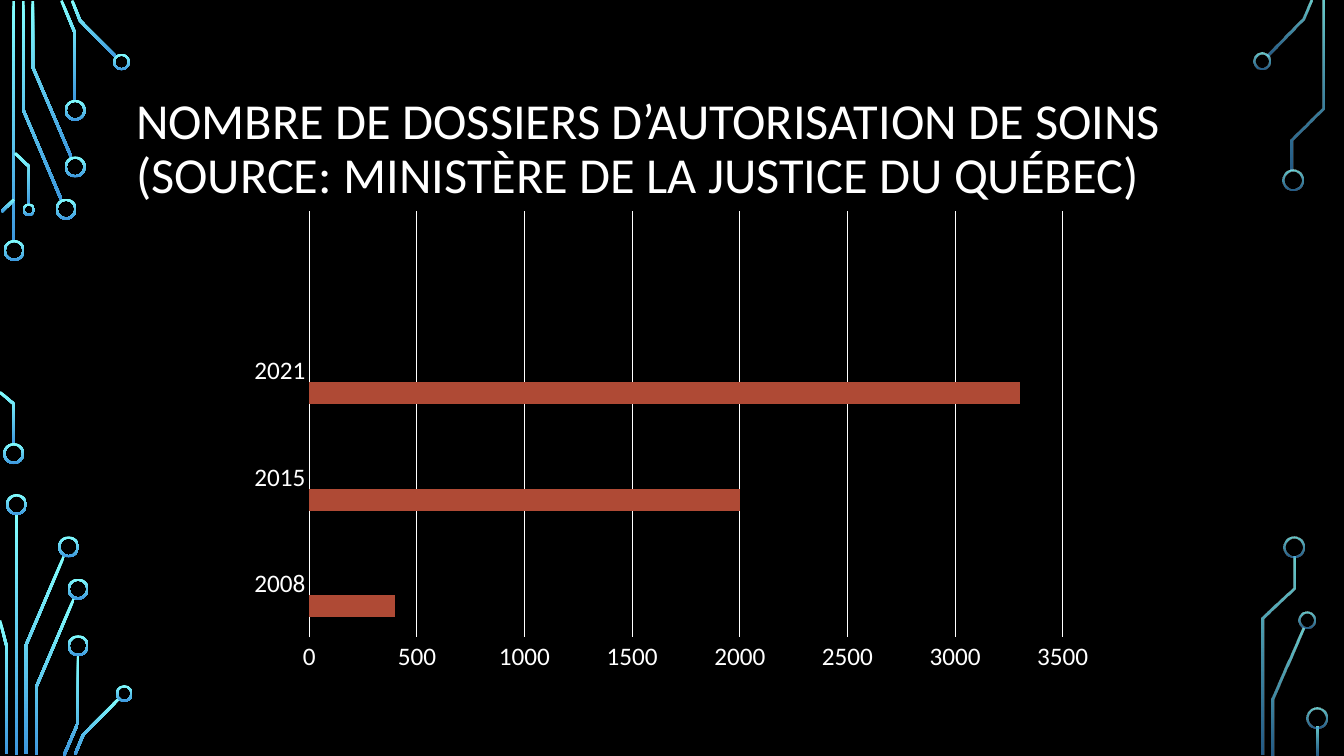
from dataclasses import dataclass
import math

from lxml import etree
from pptx import Presentation
from pptx import util as u
from pptx.chart import data
from pptx.dml.color import RGBColor
from pptx.enum import chart as charts, shapes, text
from pptx.oxml import ns


@dataclass(frozen=True)
class Theme:
    font: str = "Calibri"
    background: str = "000000"
    ink: str = "FFFFFF"
    glow_top: str = "82FFFF"
    glow_bottom: str = "3D97DE"
    series: tuple = ("AF4A35", "D35940", "E4ADA7")
    title_size: float = 36
    axis_size: float = 18
    chart_size: float = 10
    hairline: float = 0.75
    wire: float = 1.9
    ring_wall: float = 1.5


# Circuit traces: centre lines of the wires, then rings as (x, y, diameter), in points
LEFT_WIRES = [
    [(9.7, 0.7), (9.7, 172.8)],
    [(16.6, 0.7), (16.6, 78.5), (43.9, 142.9)],
    [(23.4, 0.7), (23.4, 47.9), (51.1, 112.7)],
    [(43.9, 0.4), (53.6, 23.8), (53.6, 72)],
    [(51.5, 0.4), (57.2, 14.8), (83.2, 41)],
    [(1.1, 151.2), (10.1, 142.6)],
    [(0, 280.1), (10.1, 288.7), (10.1, 317.5)],
    [(10.8, 109.4), (20.9, 119.2), (20.9, 146.2)],
    [(11.8, 367.2), (11.8, 539.3)],
    [(45.7, 397.1), (18.4, 461.2), (18.4, 538.6)],
    [(0, 443.2), (4.7, 461.5), (4.7, 538.6)],
    [(52.9, 427.3), (25.6, 491.4), (25.6, 539.3)],
    [(55.8, 468), (55.8, 516.2), (45.7, 539.6)],
    [(85, 499), (59.4, 524.9), (53.6, 538.9)],
]
LEFT_RINGS = [
    (10.1, 178.9, 15), (9.8, 324, 15), (47.2, 149.4, 15), (53.7, 119.2, 15),
    (53.7, 78.8, 15), (86.8, 44.3, 12), (20.6, 149.8, 9), (11.8, 360.4, 15),
    (49, 390.6, 15), (55.8, 420.8, 15), (55.8, 461.2, 15), (88.8, 495.4, 12),
]
RIGHT_WIRES = [
    [(936.4, 0.4), (930.6, 14), (905, 40)],
    [(945, 0.7), (945, 77.4), (923, 99.7), (923, 121.7)],
    [(931, 448.9), (909, 499.3), (909, 539.3)],
    [(924.1, 397.4), (924.1, 420.1), (901.8, 441.7), (901.8, 539.3)],
    [(941, 519.1), (941, 539.3)],
]
RIGHT_RINGS = [
    (901.3, 43.6, 12), (923.4, 128.5, 15), (933.5, 443.2, 12),
    (924.1, 390.6, 15), (940.8, 512.6, 15),
]


def wire_edge(points, offset):
    """Points of a line parallel to the centre line, with mitred corners."""
    normals = []
    for (x1, y1), (x2, y2) in zip(points, points[1:]):
        length = math.hypot(x2 - x1, y2 - y1)
        normals.append(((y1 - y2) / length, (x2 - x1) / length))
    edge = []
    for (x, y), (ax, ay), (bx, by) in zip(points, normals[:1] + normals,
                                          normals + normals[-1:]):
        reach = offset / (1 + ax * bx + ay * by)
        edge.append((x + (ax + bx) * reach, y + (ay + by) * reach))
    return edge


class SlideBuilder:
    def __init__(self, deck, theme):
        self.theme = theme
        self.page = deck.slides.add_slide(deck.slide_layouts[5])
        fill = self.page.background.fill
        fill.solid()
        fill.fore_color.rgb = RGBColor.from_string(theme.background)

    def glow(self, shape, alphas):
        """Vertical gradient, optionally with one opacity per stop."""
        shape.shadow.inherit = False
        shape.line.fill.background()
        shape.fill.gradient()
        shape.fill.gradient_angle = 270
        colors = (self.theme.glow_top, self.theme.glow_bottom)
        for index, stop in enumerate(shape.fill.gradient_stops):
            stop.position = index
            stop.color.rgb = RGBColor.from_string(colors[index])
        if alphas:
            stops = shape.fill._fill._gradFill.iter(ns.qn("a:srgbClr"))
            for color, alpha in zip(stops, alphas):
                etree.SubElement(color, ns.qn("a:alpha"), val=str(alpha * 1000))

    def wire(self, points, alphas=None):
        half = self.theme.wire / 2
        outline = wire_edge(points, half) + wire_edge(points, -half)[::-1]
        outline = [(u.Pt(x), u.Pt(y)) for x, y in outline]
        builder = self.page.shapes.build_freeform(*outline[0])
        builder.add_line_segments(outline[1:], close=True)
        self.glow(builder.convert_to_shape(), alphas)

    def ring(self, x, y, size, alphas=None):
        shape = self.page.shapes.add_shape(
            shapes.MSO_SHAPE.DONUT, u.Pt(x - size / 2), u.Pt(y - size / 2),
            u.Pt(size), u.Pt(size))
        shape.adjustments[0] = self.theme.ring_wall / size
        self.glow(shape, alphas)

    def style_font(self, font, size):
        font.name = self.theme.font
        font.size = u.Pt(size)
        font.color.rgb = RGBColor.from_string(self.theme.ink)

    def title(self, words, left, top, width, height):
        box = self.page.shapes.title
        box.left, box.top, box.width, box.height = map(u.Pt, (left, top, width, height))
        frame = box.text_frame
        frame.text = words
        frame.word_wrap = True
        frame.auto_size = text.MSO_AUTO_SIZE.NONE
        frame.vertical_anchor = text.MSO_ANCHOR.MIDDLE
        para = frame.paragraphs[0]
        para.alignment = text.PP_ALIGN.LEFT
        para.line_spacing = 0.9
        for span in para.runs:
            self.style_font(span.font, self.theme.title_size)
        # Bring the title in front of the traces
        self.page.shapes._spTree.append(box._element)

    def hairline(self, line):
        line.color.rgb = RGBColor.from_string(self.theme.ink)
        line.width = u.Pt(self.theme.hairline)

    def bar_chart(self, categories, series, left, top, width, height):
        table = data.CategoryChartData()
        table.categories = categories
        for name, values in series:
            table.add_series(name, values)
        chart = self.page.shapes.add_chart(
            charts.XL_CHART_TYPE.BAR_CLUSTERED,
            *map(u.Pt, (left, top, width, height)), table).chart
        chart.has_title = False
        chart.has_legend = False
        self.style_font(chart.font, self.theme.chart_size)

        # Bars
        plot = chart.plots[0]
        plot.gap_width = 182
        plot.overlap = 0
        plot.vary_by_categories = False
        for bars, color in zip(plot.series, self.theme.series):
            bars.format.fill.solid()
            bars.format.fill.fore_color.rgb = RGBColor.from_string(color)

        # Axes
        for axis in (chart.category_axis, chart.value_axis):
            axis.major_tick_mark = axis.minor_tick_mark = charts.XL_TICK_MARK.NONE
            self.style_font(axis.tick_labels.font, self.theme.axis_size)
        self.hairline(chart.category_axis.format.line)
        values_axis = chart.value_axis
        values_axis.minimum_scale, values_axis.maximum_scale = 0, 3500
        values_axis.major_unit = 500
        values_axis.format.line.fill.background()
        self.hairline(values_axis.major_gridlines.format.line)


def main():
    deck = Presentation()
    deck.slide_width, deck.slide_height = u.Pt(960), u.Pt(540)
    slide = SlideBuilder(deck, Theme())

    # Traces: opaque on the left, translucent on the right
    for wires, rings, alphas in ((LEFT_WIRES, LEFT_RINGS, None),
                                 (RIGHT_WIRES, RIGHT_RINGS, (80, 60))):
        for points in wires:
            slide.wire(points, alphas)
        for ring in rings:
            slide.ring(*ring, alphas)

    # Title and chart
    slide.title("NOMBRE DE DOSSIERS D’AUTORISATION DE SOINS "
                "(SOURCE: MINISTÈRE DE LA JUSTICE DU QUÉBEC)", 90, 49, 780, 116.6)
    blank = [None] * 4
    slide.bar_chart(["2008", "2015", "2021", ""],
                    [("Series 1", [400, 2000, 3300, None]),
                     ("Series 2", blank), ("Series 3", blank)],
                    169.2, 144, 620.6, 342.7)
    deck.save("out.pptx")


if __name__ == "__main__":
    main()
